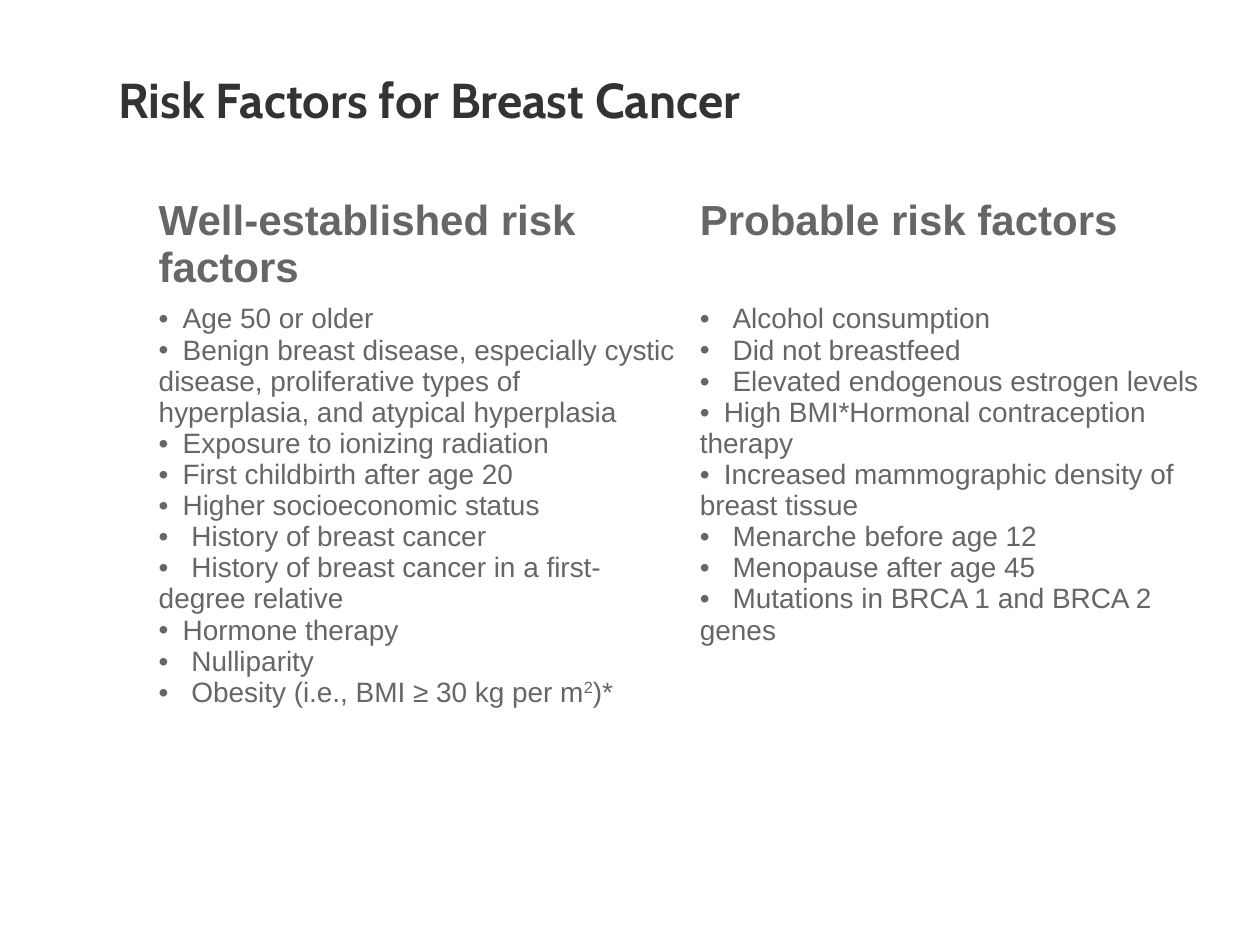
from dataclasses import dataclass

from lxml.etree import SubElement as Sub
from pptx import Presentation
from pptx.dml.color import RGBColor as Rgb
from pptx.enum.shapes import MSO_SHAPE as Shape
from pptx.enum.text import MSO_ANCHOR as Anchor, PP_ALIGN as Align
from pptx.oxml.ns import qn
from pptx.util import Inches, Pt


@dataclass(frozen=True)
class Theme:
    title: str = "333333"
    body: str = "666666"
    paper: str = "FFFFFF"
    title_font: str = "Cabin"
    body_font: str = "Arial"
    title_size: int = 28
    head_size: int = 24
    item_size: int = 16
    rule: float = 0.75


THEME = Theme()
WIDE, HIGH = Inches(10), Inches(7.5)
NEAR, FAR = Inches(0.19), Inches(0.26)
PAD_X, PAD_Y = Inches(0.09), Inches(0.04)

TITLE = "Risk Factors for Breast Cancer"
# Each item is its tab stop after the bullet and its text; ^ marks a superscript.
LISTS = {
    "Well-established risk factors": [
        (NEAR, "Age 50 or older"),
        (NEAR, "Benign breast disease, especially cystic disease, "
               "proliferative types of hyperplasia, and atypical hyperplasia"),
        (NEAR, "Exposure to ionizing radiation"),
        (NEAR, "First childbirth after age 20"),
        (NEAR, "Higher socioeconomic status"),
        (FAR, "History of breast cancer"),
        (FAR, "History of breast cancer in a first-degree relative"),
        (NEAR, "Hormone therapy"),
        (FAR, "Nulliparity"),
        (FAR, "Obesity (i.e., BMI ≥ 30 kg per m^2^)*"),
    ],
    "Probable risk factors": [
        (FAR, "Alcohol consumption"),
        (FAR, "Did not breastfeed"),
        (FAR, "Elevated endogenous estrogen levels"),
        (NEAR, "High BMI*Hormonal contraception therapy"),
        (NEAR, "Increased mammographic density of breast tissue"),
        (FAR, "Menarche before age 12"),
        (FAR, "Menopause after age 45"),
        (FAR, "Mutations in BRCA 1 and BRCA 2 genes"),
    ],
}


def share(left, top, width, height):
    """Turn shares of the slide into a box of lengths."""
    return (int(left * WIDE), int(top * HIGH),
            int(width * WIDE), int(height * HIGH))


def style(run, font, size, color, bold=False):
    run.font.name, run.font.size, run.font.bold = font, Pt(size), bold
    run.font.color.rgb = Rgb.from_string(color)


def paint(part):
    part.fill.solid()
    part.fill.fore_color.rgb = Rgb.from_string(THEME.paper)


def add_title(slide, box):
    shape = slide.shapes.add_shape(Shape.RECTANGLE, *box)
    shape.shadow.inherit = False
    shape.line.fill.background()
    paint(shape)
    frame = shape.text_frame
    frame.word_wrap = True
    frame.vertical_anchor = Anchor.TOP
    frame.margin_left = frame.margin_right = 0
    frame.margin_top = frame.margin_bottom = 0
    frame.text = TITLE
    frame.paragraphs[0].alignment = Align.LEFT
    style(frame.paragraphs[0].runs[0], THEME.title_font,
          THEME.title_size, THEME.title, True)


def dress(cell):
    """Give a cell its margins, dotted rules and fill, in schema order."""
    cell.margin_left = cell.margin_right = PAD_X
    cell.margin_top = cell.margin_bottom = PAD_Y
    props = cell._tc.get_or_add_tcPr()
    for side in ("a:lnT", "a:lnB"):
        line = Sub(props, qn(side), w=str(Pt(THEME.rule)))
        Sub(Sub(line, qn("a:solidFill")), qn("a:srgbClr"), val=THEME.paper)
        Sub(line, qn("a:prstDash"), val="dot")
    paint(cell)


def add_item(para, stop, text):
    """Write a bullet whose first line starts at a tab stop."""
    props = para._p.get_or_add_pPr()
    props.set("marL", "0")
    props.set("indent", "0")
    Sub(props, qn("a:buFont"), typeface=THEME.body_font)
    Sub(props, qn("a:buChar"), char="•")
    Sub(Sub(props, qn("a:tabLst")), qn("a:tab"), pos=str(stop), algn="l")
    for n, part in enumerate(f"\t{text}".split("^")):
        run = para.add_run()
        run.text = part
        style(run, THEME.body_font, THEME.item_size, THEME.body)
        if n % 2:
            run.font._element.set("baseline", "30000")


def add_lists(slide, box):
    """Place one column per list, with its heading in the first row."""
    table = slide.shapes.add_table(2, len(LISTS), *box).table
    table.first_row = table.horz_banding = False
    table.rows[0].height = int(box[3] * 0.17)
    table.rows[1].height = box[3] - table.rows[0].height
    for col, (name, items) in enumerate(LISTS.items()):
        head, body = table.cell(0, col), table.cell(1, col)
        dress(head)
        dress(body)
        head.text_frame.text = name
        style(head.text_frame.paragraphs[0].runs[0], THEME.body_font,
              THEME.head_size, THEME.body, True)
        frame = body.text_frame
        for n, (stop, text) in enumerate(items):
            para = frame.add_paragraph() if n else frame.paragraphs[0]
            add_item(para, stop, text)


def main():
    deck = Presentation()
    deck.slide_width, deck.slide_height = WIDE, HIGH
    slide = deck.slides.add_slide(deck.slide_layouts[6])
    add_lists(slide, share(0.117, 0.204, 0.859, 0.66))
    add_title(slide, share(0.094, 0.074, 0.742, 0.103))
    deck.save("out.pptx")


if __name__ == "__main__":
    main()
